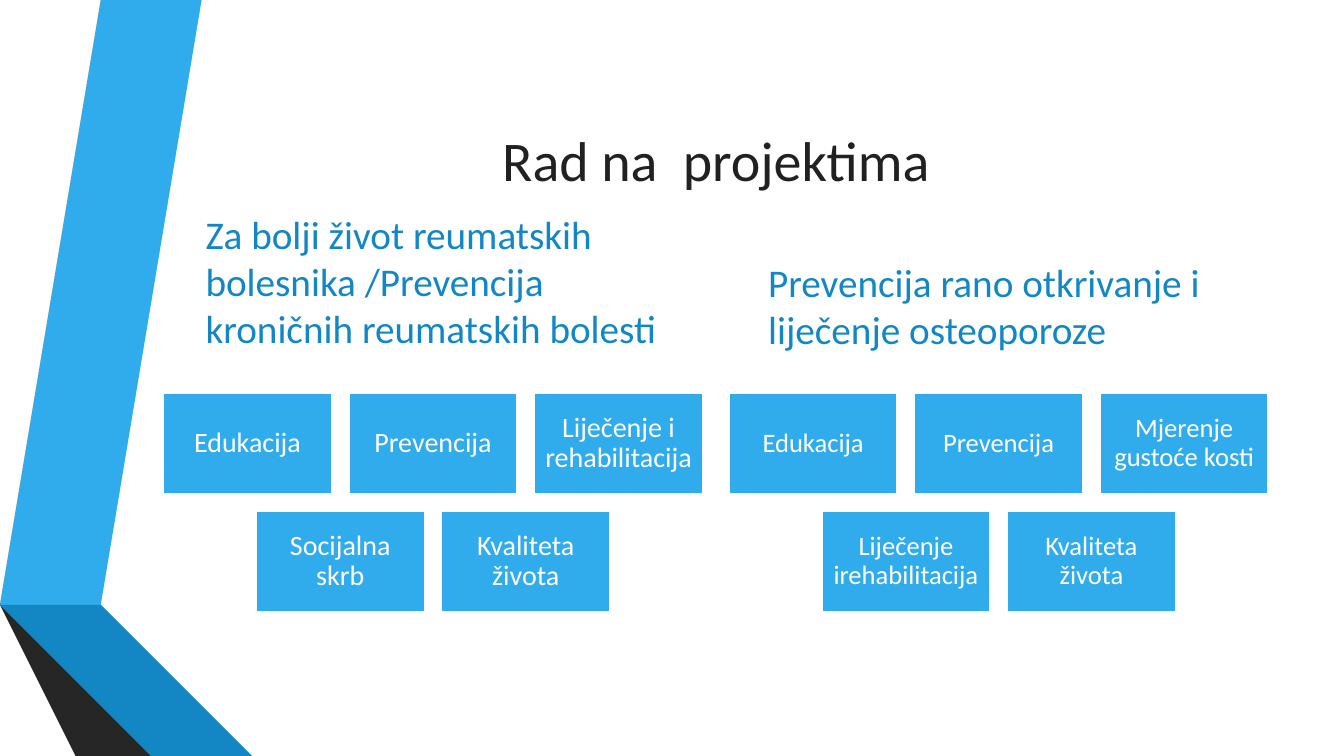
from dataclasses import dataclass

from pptx import Presentation
from pptx.dml.color import RGBColor
from pptx.enum.shapes import MSO_SHAPE
from pptx.enum.text import MSO_ANCHOR, PP_ALIGN
from pptx.util import Inches, Pt


@dataclass(frozen=True)
class Theme:
    font: str = "Calibri"
    title_color: str = "212121"
    heading_color: str = "1287C3"
    box_color: str = "30ACEC"
    white: str = "FFFFFF"
    title_size: int = 40
    heading_size: int = 28


THEME = Theme()

RIBBONS = [
    ("30ACEC", [(0.5, 5.78), (0.77, 5.83), (1.73, 0), (1.45, 0)]),
    ("595959", [(1.39, 0), (1.11, 0), (0.16, 5.73), (0.44, 5.77)]),
    ("262626", [(0.16, 5.73), (1.45, 7.5), (1.51, 7.5)]),
    ("0C5A82", [(0.5, 5.79), (2.08, 7.5), (2.14, 7.5)]),
    ("1287C3", [(0.5, 5.78), (2.14, 7.5), (2.83, 7.5), (0.77, 5.83)]),
    ("404040", [(2.02, 7.5), (0.48, 5.83), (0.44, 5.77), (0.16, 5.73), (1.51, 7.5)]),
]

BOX_WIDTH, BOX_HEIGHT, BOX_GAP = 1.67, 1, 0.17
GRID_TOP = 3.9
BOXES_PER_ROW = 3

# Heading, heading position and width, grid left edge, box text size, box labels
PROJECTS = [
    ("Za bolji život reumatskih bolesnika /Prevencija kroničnih reumatskih bolesti",
     (1.94, 2.91, 5.04), 1.62, 20,
     ["Edukacija", "Prevencija", "Liječenje i rehabilitacija",
      "Socijalna skrb", "Kvaliteta života"]),
    ("Prevencija rano otkrivanje i liječenje osteoporoze",
     (7.52, 2.92, 5.06), 7.23, 19,
     ["Edukacija", "Prevencija", "Mjerenje gustoće kosti",
      "Liječenje irehabilitacija", "Kvaliteta života"]),
]


def set_text(shape, text, size, color, alignment, anchor):
    frame = shape.text_frame
    frame.text = text
    frame.word_wrap = True
    frame.vertical_anchor = anchor
    paragraph = frame.paragraphs[0]
    paragraph.alignment = alignment
    font = paragraph.runs[0].font
    font.name = THEME.font
    font.size = Pt(size)
    font.color.rgb = RGBColor.from_string(color)


def set_fill(shape, color):
    shape.shadow.inherit = False
    shape.fill.solid()
    shape.fill.fore_color.rgb = RGBColor.from_string(color)


def add_ribbon(slide, color, points):
    builder = slide.shapes.build_freeform(*points[0], scale=Inches(1))
    builder.add_line_segments(points[1:], close=True)
    ribbon = builder.convert_to_shape()
    set_fill(ribbon, color)
    ribbon.line.fill.background()


def add_label(slide, text, left, top, width, height, size, color, alignment, anchor):
    label = slide.shapes.add_textbox(
        Inches(left), Inches(top), Inches(width), Inches(height))
    set_text(label, text, size, color, alignment, anchor)


def add_box(slide, text, left, top, size):
    box = slide.shapes.add_shape(
        MSO_SHAPE.RECTANGLE, Inches(left), Inches(top),
        Inches(BOX_WIDTH), Inches(BOX_HEIGHT))
    set_fill(box, THEME.box_color)
    box.line.color.rgb = RGBColor.from_string(THEME.white)
    box.line.width = Pt(1.25)
    set_text(box, text, size, THEME.white, PP_ALIGN.CENTER, MSO_ANCHOR.MIDDLE)
    frame = box.text_frame
    frame.margin_left = frame.margin_right = Inches(0.08)
    frame.margin_top = frame.margin_bottom = Inches(0.08)
    frame.paragraphs[0].line_spacing = 0.9


def add_box_grid(slide, labels, left, size):
    """Lay the boxes out in rows, centring a row that is not full."""
    step = BOX_WIDTH + BOX_GAP
    for start in range(0, len(labels), BOXES_PER_ROW):
        row_labels = labels[start:start + BOXES_PER_ROW]
        row_left = left + (BOXES_PER_ROW - len(row_labels)) * step / 2
        top = GRID_TOP + start // BOXES_PER_ROW * (BOX_HEIGHT + BOX_GAP)
        for column, text in enumerate(row_labels):
            add_box(slide, text, row_left + column * step, top, size)


def main():
    presentation = Presentation()
    presentation.slide_width = Inches(13.33)
    presentation.slide_height = Inches(7.5)
    slide = presentation.slides.add_slide(presentation.slide_layouts[6])

    for color, points in RIBBONS:
        add_ribbon(slide, color, points)

    add_label(slide, "Rad na  projektima", 1.62, 0.88, 10.96, 1.4,
              THEME.title_size, THEME.title_color, PP_ALIGN.CENTER, MSO_ANCHOR.MIDDLE)

    for heading, (left, top, width), grid_left, size, labels in PROJECTS:
        add_label(slide, heading, left, top, width, 0.63,
                  THEME.heading_size, THEME.heading_color, PP_ALIGN.LEFT, MSO_ANCHOR.BOTTOM)
        add_box_grid(slide, labels, grid_left, size)

    presentation.save("out.pptx")


if __name__ == "__main__":
    main()
